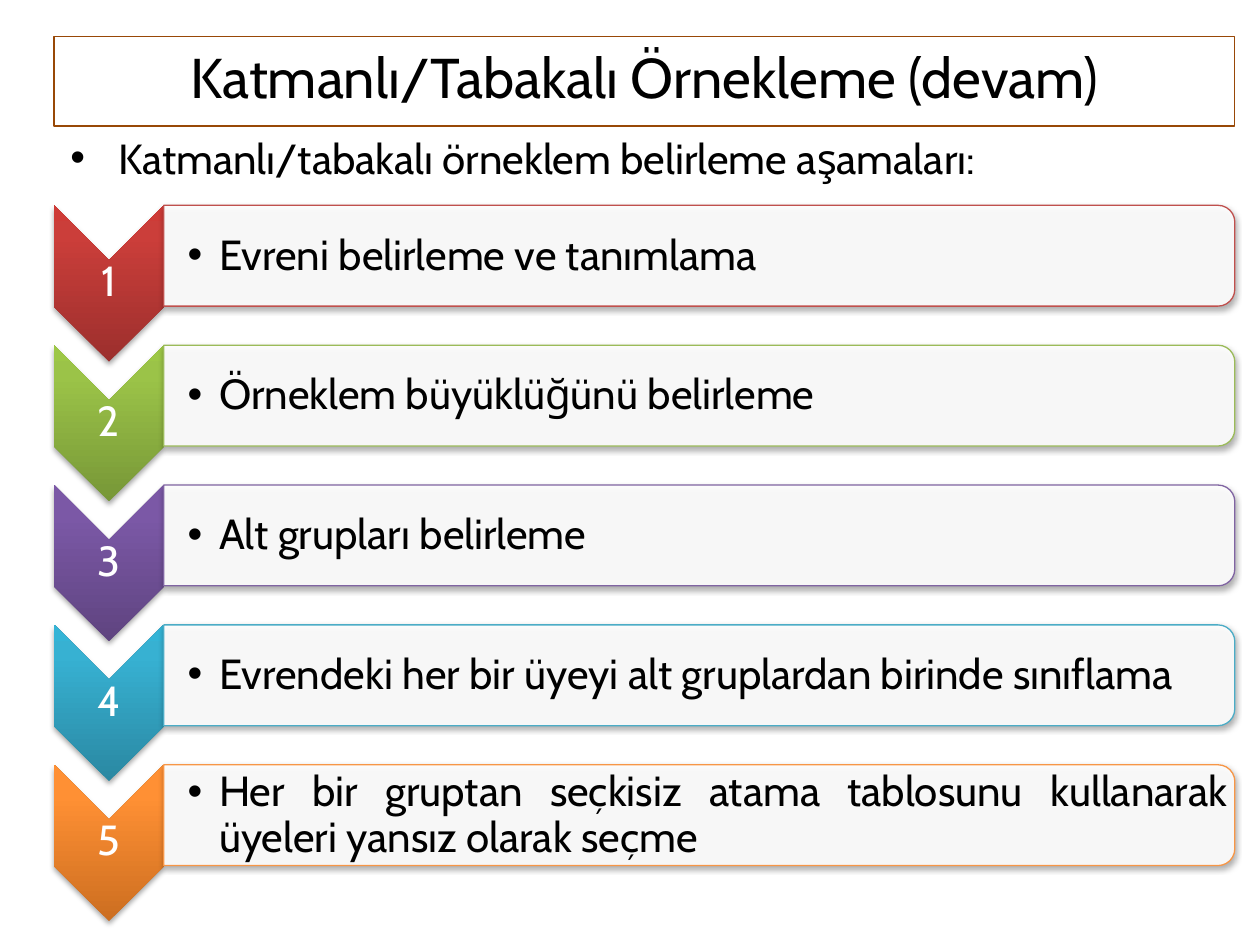
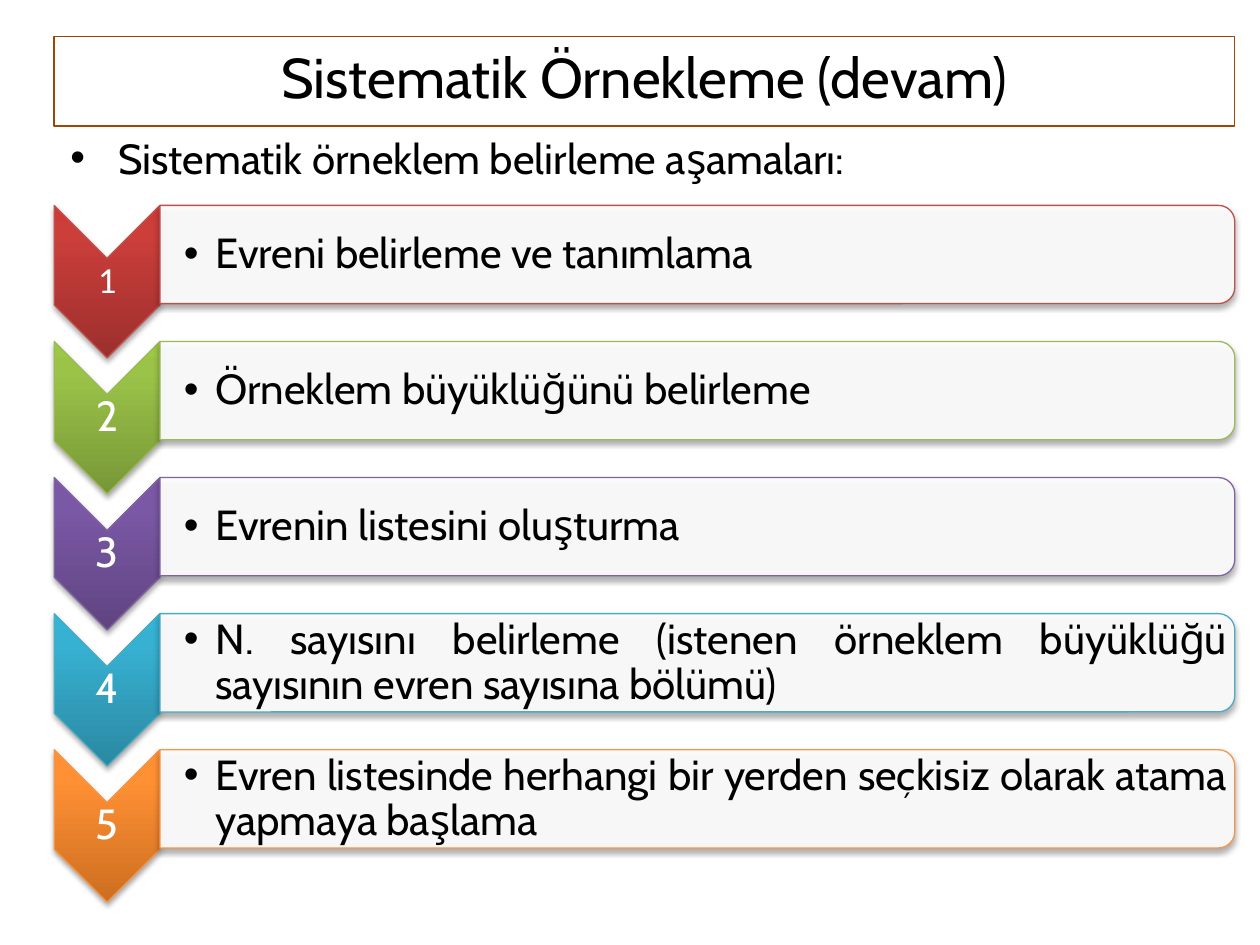
import pptx
import pptx.dml.color
import pptx.enum.shapes
import pptx.enum.text
import pptx.oxml
import pptx.oxml.ns
import pptx.util

RGB = pptx.dml.color.RGBColor
SHAPE = pptx.enum.shapes.MSO_SHAPE
ALIGN = pptx.enum.text.PP_ALIGN
ANCHOR = pptx.enum.text.MSO_ANCHOR
qn = pptx.oxml.ns.qn
DRAWING = 'xmlns:a="http://schemas.openxmlformats.org/drawingml/2006/main"'

# Lengths are px, 100 to the inch
SCALE = 9144
BLACK = RGB(0x00, 0x00, 0x00)
WHITE = RGB(0xFF, 0xFF, 0xFF)
BROWN = RGB(0x98, 0x48, 0x07)

# Per step: outline colour, then chevron gradient from bottom to top
STEP_COLOURS = [
    (RGB(0xC0, 0x50, 0x4D), (RGB(0x9C, 0x2F, 0x2D), RGB(0xCB, 0x3E, 0x3A), RGB(0xCE, 0x3B, 0x37))),
    (RGB(0x9B, 0xBB, 0x59), (RGB(0x77, 0x97, 0x37), RGB(0x9B, 0xC3, 0x48), RGB(0x9D, 0xC7, 0x46))),
    (RGB(0x80, 0x64, 0xA2), (RGB(0x5F, 0x44, 0x80), RGB(0x7B, 0x58, 0xA6), RGB(0x7C, 0x57, 0xA8))),
    (RGB(0x4B, 0xAC, 0xC6), (RGB(0x2A, 0x88, 0xA2), RGB(0x37, 0xB1, 0xD2), RGB(0x34, 0xB4, 0xD6))),
    (RGB(0xF7, 0x96, 0x46), (RGB(0xCC, 0x6E, 0x20), RGB(0xFF, 0x90, 0x34), RGB(0xFF, 0x91, 0x36))),
]
GRADIENT_STOPS = (0, 80, 100)
LEFT, RIGHT, STEPS_TOP = 43, 980, 163


def px(length):
    return pptx.util.Emu(round(length * SCALE))


def element(xml):
    """Parse one drawing element, such as 'buChar char="•"'."""
    return pptx.oxml.parse_xml(f"<a:{xml} {DRAWING}/>")


def write(shape, text, *, size=24, font="Cabin", colour=BLACK, align=ALIGN.LEFT,
          anchor=ANCHOR.TOP, insets=(10, 5, 10, 5), indent=0, spacing=None):
    frame = shape.text_frame
    frame.word_wrap = True
    frame.vertical_anchor = anchor
    (frame.margin_left, frame.margin_top,
     frame.margin_right, frame.margin_bottom) = map(px, insets)
    para = frame.paragraphs[0]
    para.alignment = align
    if indent:
        properties = para._p.get_or_add_pPr()
        properties.set("marL", str(px(indent)))
        properties.set("indent", str(-px(indent)))
        properties.append(element('buFont typeface="Arial"'))
        properties.append(element('buChar char="•"'))
    if spacing:
        para.line_spacing = spacing
    span = para.add_run()
    span.text = text
    span.font.size = pptx.util.Pt(size)
    span.font.name = font
    span.font.color.rgb = colour


class Builder:
    def __init__(self, deck):
        self.deck = deck
        self.page = None

    def new_page(self):
        self.page = self.deck.slides.add_slide(self.deck.slide_layouts[6])

    def shape(self, kind, left, top, width, height, line=None):
        shape = self.page.shapes.add_shape(kind, px(left), px(top), px(width), px(height))
        shape.shadow.inherit = False
        shape.fill.background()
        if line is None:
            shape.line.fill.background()
        else:
            shape.line.color.rgb = line
            shape.line.width = pptx.util.Pt(0.75)
        return shape

    def turned_shape(self, kind, left, top, width, height, line=None):
        """Shape turned a quarter that covers the given area, with a soft shadow."""
        shift = (width - height) / 2
        shape = self.shape(kind, left + shift, top - shift, height, width, line)
        shape.rotation = 90
        shape._element.spPr.find(qn("a:effectLst")).append(pptx.oxml.parse_xml(
            f'<a:outerShdw {DRAWING} blurRad="40000" dist="23000" dir="5400000" '
            'rotWithShape="0"><a:srgbClr val="000000"><a:alpha val="35000"/>'
            '</a:srgbClr></a:outerShdw>'))
        return shape

    def text(self, text, left, top, width, height, **style):
        box = self.page.shapes.add_textbox(px(left), px(top), px(width), px(height))
        write(box, text, **style)

    def heading(self, title, lead):
        self.text(lead, 46, 100, 937, 79, indent=38)
        box = self.shape(SHAPE.RECTANGLE, LEFT, 29, RIGHT - LEFT, 71, BROWN)
        write(box, title, size=32, align=ALIGN.CENTER)

    def chevron(self, number, top, width, height, gradient, line, **style):
        shape = self.turned_shape(SHAPE.CHEVRON, LEFT, top, width, height, line)
        stops = "".join(f'<a:gs pos="{stop * 1000}"><a:srgbClr val="{colour}"/></a:gs>'
                        for stop, colour in zip(GRADIENT_STOPS, gradient))
        properties = shape._element.spPr
        properties.replace(properties.find(qn("a:noFill")), pptx.oxml.parse_xml(
            f'<a:gradFill {DRAWING} rotWithShape="0"><a:gsLst>{stops}</a:gsLst>'
            '<a:lin ang="16200000" scaled="0"/></a:gradFill>'))
        self.text(number, LEFT, top + width // 2, width, height - width, colour=WHITE,
                  align=ALIGN.CENTER, anchor=ANCHOR.MIDDLE, insets=(2, 2, 2, 2),
                  spacing=0.9, **style)

    def panel(self, text, left, top, height, line, align):
        width = RIGHT - left
        shape = self.turned_shape(SHAPE.ROUND_2_SAME_RECTANGLE, left, top, width, height, line)
        shape.fill.solid()
        shape.fill.fore_color.rgb = WHITE
        shape._element.spPr.find(qn("a:solidFill"))[0].append(element('alpha val="90000"'))
        self.text(text, left, top + 4, width - 4, height - 7, align=align,
                  anchor=ANCHOR.MIDDLE, insets=(19, 2, 2, 2), indent=25, spacing=0.9)

    def steps(self, texts, pitch, chevron_size, panel_height, justified_from,
              outlined=False, first_number=None):
        width, height = chevron_size
        for index, (text, (line, gradient)) in enumerate(zip(texts, STEP_COLOURS)):
            top = STEPS_TOP + index * pitch
            style = first_number if first_number and index == 0 else {}
            self.chevron(str(index + 1), top, width, height, gradient,
                         line if outlined else None, **style)
            align = ALIGN.JUSTIFY if index + 1 >= justified_from else ALIGN.LEFT
            self.panel(text, LEFT + width, top, panel_height, line, align)


def main():
    deck = pptx.Presentation()
    deck.slide_width, deck.slide_height = px(1000), px(750)
    builder = Builder(deck)

    # Stratified sampling
    builder.new_page()
    builder.heading("Katmanlı/Tabakalı Örnekleme (devam)",
                    "Katmanlı/tabakalı örneklem belirleme aşamaları:")
    builder.steps([
        "Evreni belirleme ve tanımlama",
        "Örneklem büyüklüğünü belirleme",
        "Alt grupları belirleme",
        "Evrendeki her bir üyeyi alt gruplardan birinde sınıflama",
        "Her bir gruptan seçkisiz atama tablosunu kullanarak üyeleri yansız olarak seçme",
    ], pitch=111, chevron_size=(87, 124), panel_height=80, justified_from=4)

    # Systematic sampling
    builder.new_page()
    builder.heading("Sistematik Örnekleme (devam)",
                    "Sistematik örneklem belirleme aşamaları:")
    builder.steps([
        "Evreni belirleme ve tanımlama",
        "Örneklem büyüklüğünü belirleme",
        "Evrenin listesini oluşturma",
        "N. sayısını belirleme (istenen örneklem büyüklüğü sayısının evren sayısına bölümü)",
        "Evren listesinde herhangi bir yerden seçkisiz olarak atama yapmaya başlama",
    ], pitch=108, chevron_size=(84, 121), panel_height=78, justified_from=4,
        outlined=True, first_number={"size": 21, "font": "Calibri"})

    deck.save("out.pptx")


if __name__ == "__main__":
    main()
